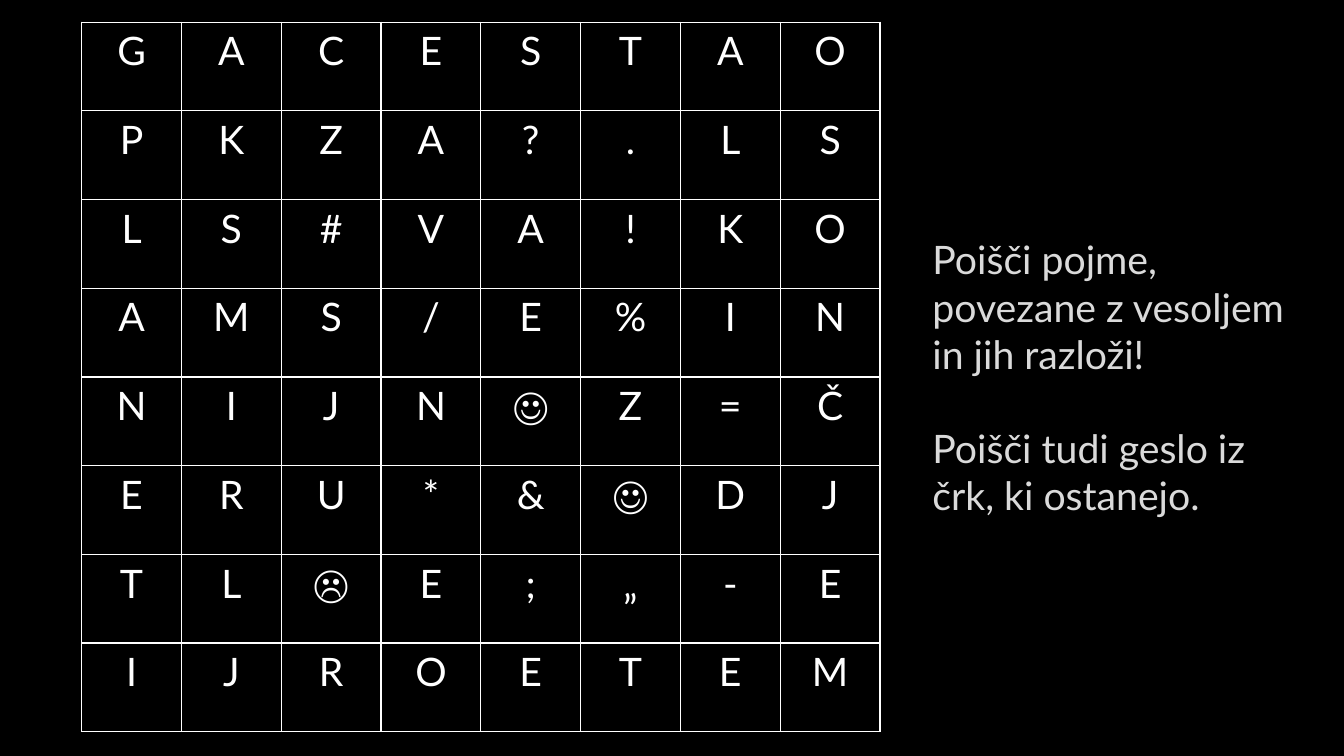
from dataclasses import dataclass

import pptx
import pptx.dml.color
import pptx.enum.text
import pptx.oxml
import pptx.oxml.ns
import pptx.util

PX = 9144  # EMU per px, at 100 px to the inch


@dataclass(frozen=True)
class Theme:
    back: str = "000000"
    letter: str = "FFFFFF"
    hint: str = "DADADA"
    font: str = "Lato"
    size: float = 28
    gap: float = 33.6
    border: float = 1


@dataclass(frozen=True)
class Box:
    left: int
    top: int
    width: int
    height: int

    def emu(self) -> tuple[int, ...]:
        return tuple(n * PX for n in (self.left, self.top, self.width, self.height))


THEME = Theme()
COL, ROW = 99, 88
LETTERS = (
    "GACESTAO",
    "PKZA?.LS",
    "LS#VA!KO",
    "AMS/E%IN",
    "NIJN☺Z=Č",
    "ERU*&☺DJ",
    "TL☹E;„-E",
    "IJROETEM",
)
GRID = Box(81, 22, COL * len(LETTERS[0]), ROW * len(LETTERS))
HINT = Box(915, 229, 372, 293)
TASKS = (
    "Poišči pojme, povezane z vesoljem in jih razloži!",
    "Poišči tudi geslo iz črk, ki ostanejo.",
)


def paint(fill, color: str) -> None:
    fill.solid()
    fill.fore_color.rgb = pptx.dml.color.RGBColor.from_string(color)


def style(para, color: str) -> None:
    for run in para.runs:
        run.font.name = THEME.font
        run.font.size = pptx.util.Pt(THEME.size)
        run.font.color.rgb = pptx.dml.color.RGBColor.from_string(color)


def frame(cell) -> None:
    """Draw a line on all four sides of a cell, ahead of its fill."""
    props = cell._tc.get_or_add_tcPr()
    space = pptx.oxml.ns.nsdecls("a")
    for place, side in enumerate(("lnL", "lnR", "lnT", "lnB")):
        line = pptx.oxml.parse_xml(
            f'<a:{side} {space} w="{pptx.util.Pt(THEME.border)}"><a:solidFill>'
            f'<a:srgbClr val="{THEME.letter}"/></a:solidFill></a:{side}>'
        )
        props.insert(place, line)


def add_grid(slide, box: Box, rows: tuple[str, ...]) -> None:
    table = slide.shapes.add_table(len(rows), len(rows[0]), *box.emu()).table
    table.first_row = False
    table.horz_banding = False
    for col in table.columns:
        col.width = COL * PX
    for row, letters in zip(table.rows, rows):
        row.height = ROW * PX
        for cell, letter in zip(row.cells, letters):
            cell.text_frame.text = letter
            para = cell.text_frame.paragraphs[0]
            para.alignment = pptx.enum.text.PP_ALIGN.CENTER
            style(para, THEME.letter)
            paint(cell.fill, THEME.back)
            frame(cell)


def add_hint(slide, box: Box, tasks: tuple[str, ...]) -> None:
    text = slide.shapes.add_textbox(*box.emu()).text_frame
    text.word_wrap = True
    text.auto_size = pptx.enum.text.MSO_AUTO_SIZE.SHAPE_TO_FIT_TEXT
    text.text = "\n".join(tasks)
    for para in text.paragraphs:
        style(para, THEME.hint)
    for para in text.paragraphs[1:]:
        para.space_before = pptx.util.Pt(THEME.gap)


def main() -> None:
    deck = pptx.Presentation()
    deck.slide_width, deck.slide_height = 1333 * PX, 750 * PX
    slide = deck.slides.add_slide(deck.slide_layouts[6])
    paint(slide.background.fill, THEME.back)
    add_grid(slide, GRID, LETTERS)
    add_hint(slide, HINT, TASKS)
    deck.save("out.pptx")


if __name__ == "__main__":
    main()
